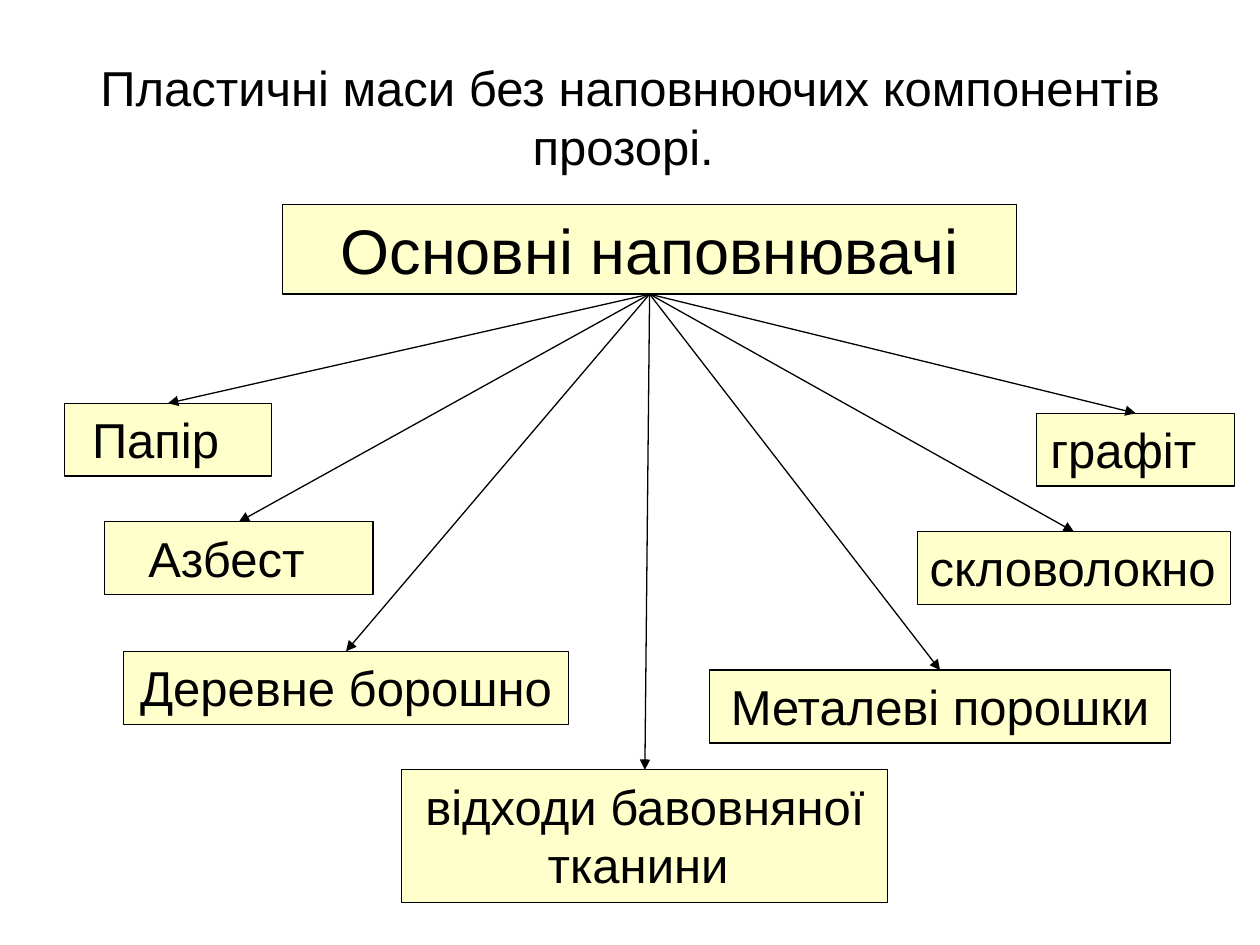
from dataclasses import dataclass

from lxml.etree import SubElement
from pptx import Presentation
from pptx.dml.color import RGBColor
from pptx.enum.shapes import MSO_CONNECTOR, MSO_SHAPE
from pptx.enum.text import MSO_ANCHOR, PP_ALIGN
from pptx.oxml.ns import qn
from pptx.shapes.autoshape import Shape
from pptx.slide import Slide
from pptx.text.text import TextFrame
from pptx.util import Cm, Pt

BLACK = "000000"
CREAM = "FFFFCC"


@dataclass
class Label:
    text: str
    left: float
    top: float
    width: float
    height: float = 1.47
    size: int = 28
    align: PP_ALIGN = PP_ALIGN.CENTER
    extra_right: float = 0


HEADING = Label("Основні наповнювачі", 5.69, 4.13, 14.81, 1.8, size=36)
FILLERS = [
    Label("Папір", 1.3, 8.13, 4.17, extra_right=0.5),
    Label("Азбест", 2.11, 10.52, 5.41, extra_right=0.5),
    Label("Деревне борошно", 2.49, 13.13, 8.97),
    Label("відходи бавовняної тканини ", 8.1, 15.52, 9.8, 2.67),
    Label("Металеві порошки", 14.3, 13.51, 9.3),
    Label("скловолокно", 18.49, 10.72, 6.32, align=PP_ALIGN.LEFT),
    Label("графіт", 20.9, 8.33, 3.99, extra_right=0.5),
]


def color(value: str) -> RGBColor:
    return RGBColor.from_string(value)


def write(frame: TextFrame, text: str, size: int, align: PP_ALIGN) -> None:
    frame.word_wrap = True
    para = frame.paragraphs[0]
    para.alignment = align
    span = para.add_run()
    span.text = text
    span.font.name = "Arial"
    span.font.size = Pt(size)
    span.font.color.rgb = color(BLACK)


def add_label(page: Slide, label: Label) -> Shape:
    box = page.shapes.add_shape(
        MSO_SHAPE.RECTANGLE,
        Cm(label.left), Cm(label.top), Cm(label.width), Cm(label.height),
    )
    box.shadow.inherit = False
    box.fill.solid()
    box.fill.fore_color.rgb = color(CREAM)
    box.line.color.rgb = color(BLACK)
    box.line.width = Pt(0.75)
    frame = box.text_frame
    frame.vertical_anchor = MSO_ANCHOR.TOP
    frame.margin_right = Cm(0.25 + label.extra_right)
    write(frame, label.text, label.size, label.align)
    return box


def add_arrow(page: Slide, source: Shape, target: Shape) -> None:
    arrow = page.shapes.add_connector(MSO_CONNECTOR.STRAIGHT, 0, 0, 0, 0)
    arrow.begin_connect(source, 2)
    arrow.end_connect(target, 0)
    arrow.line.color.rgb = color(BLACK)
    arrow.line.width = Pt(0.75)
    properties = arrow.element.spPr
    SubElement(properties.find(qn("a:ln")), qn("a:tailEnd"), type="triangle")
    SubElement(properties, qn("a:effectLst"))


def main() -> None:
    deck = Presentation()
    deck.slide_width, deck.slide_height = Cm(25.4), Cm(19.05)
    page = deck.slides.add_slide(deck.slide_layouts[5])

    title = page.shapes.title
    title.left, title.top = Cm(1.27), Cm(0.76)
    title.width, title.height = Cm(22.86), Cm(3.18)
    title.text_frame.vertical_anchor = MSO_ANCHOR.MIDDLE
    write(
        title.text_frame,
        "Пластичні маси без наповнюючих компонентів прозорі. ",
        28,
        PP_ALIGN.CENTER,
    )

    heading = add_label(page, HEADING)
    for filler in FILLERS:
        add_arrow(page, heading, add_label(page, filler))

    deck.save("out.pptx")


if __name__ == "__main__":
    main()
